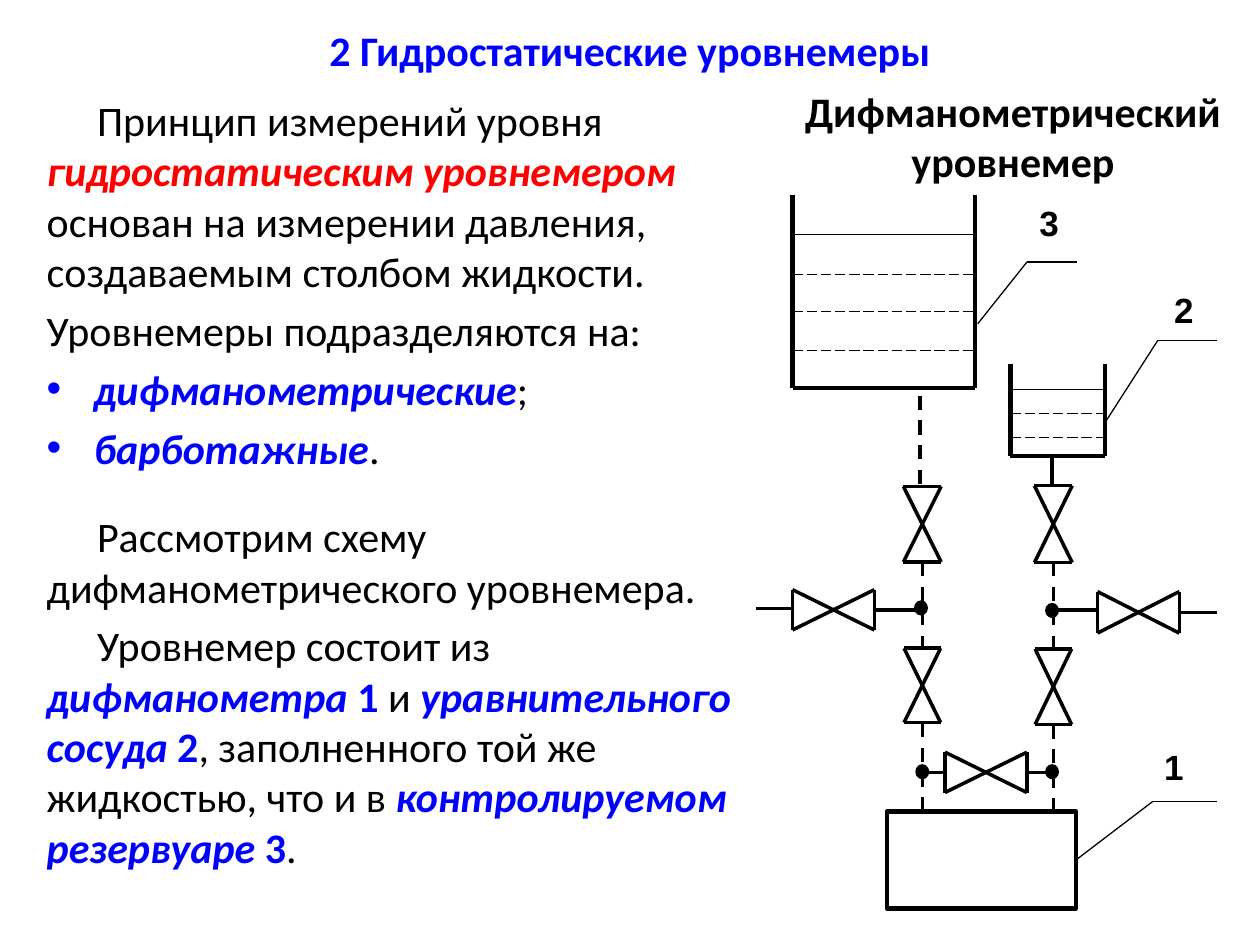
"""Build the slide on hydrostatic level gauges with a piping scheme."""
import pptx
import pptx.util
import pptx.dml.color
import pptx.enum.dml
import pptx.enum.shapes
import pptx.enum.text
from lxml import etree

HUES = {"black": "000000", "blue": "0000FF", "red": "FF0000", "white": "FFFFFF"}
STYLES = {
    "plain": ("black", False, False),
    "head": ("black", True, False),
    "title": ("blue", True, False),
    "term": ("blue", True, True),
    "key": ("red", True, True),
}
FACE = "Calibri"
COLS, ROWS = 100, 75

TITLE = "2 Гидростатические уровнемеры"
HEAD = ["Дифманометрический", "уровнемер"]
BODY = [
    ("indent", 0, [("Принцип измерений уровня ", "plain"),
                   ("гидростатическим уровнемером ", "key"),
                   ("основан на измерении давления, создаваемым столбом жидкости.", "plain")]),
    ("flush", 4.8, [("Уровнемеры подразделяются на:", "plain")]),
    ("bullet", 4.8, [("дифманометрические", "term"), (";", "plain")]),
    ("bullet", 4.8, [("барботажные", "term"), (".", "plain")]),
    ("indent", 21.8, [("Рассмотрим схему дифманометрического уровнемера.", "plain")]),
    ("indent", 4.8, [("Уровнемер состоит из ", "plain"),
                     ("дифманометра ", "term"), ("1 ", "title"), ("и ", "plain"),
                     ("уравнительного сосуда ", "term"), ("2", "title"),
                     (", заполненного той же жидкостью, что и в ", "plain"),
                     ("контролируемом резервуаре ", "term"), ("3", "title"),
                     (".", "plain")]),
]

METER = (70.4, 64.4, 15, 7.7)
TANKS = [
    (62.9, 15.5, 77.4, 30.8, [18.6, 21.8, 24.7, 27.8]),
    (80.2, 28.9, 87.7, 36.2, [30.9, 32.8, 34.7]),
]
LEFT, RIGHT = 73.2, 83.6
VALVES = [
    (LEFT, 41.6, 3, 6), (RIGHT, 41.6, 3, 6.1),
    (LEFT, 54.4, 2.9, 5.9), (RIGHT, 54.5, 2.9, 6),
    (66.15, 48.4, 6.5, 3.2), (90.35, 48.6, 6.5, 3.3), (78.25, 61.3, 6.5, 3.2),
]
PIPES = [
    (73, 38.4, 73, 30.9, "dash"), (83.5, 38.4, 83.5, 36.2, "solid"),
    (LEFT, 44.6, LEFT, 51.4, "dash"), (RIGHT, 44.6, RIGHT, 51.5, "dash"),
    (LEFT, 57.4, LEFT, 64.5, "dash"), (RIGHT, 57.5, RIGHT, 64.5, "dash"),
    (60, 48.3, 62.9, 48.3, "solid"), (69.4, 48.4, LEFT, 48.4, "solid"),
    (83.5, 48.4, 87.1, 48.4, "solid"), (93.6, 48.6, 96.6, 48.6, "solid"),
    (LEFT, 61.3, 75, 61.3, "solid"), (81.5, 61.3, 83.5, 61.3, "solid"),
]
DOTS = [(73.1, 48.25), (83.5, 48.45), (73.2, 61.25), (83.5, 61.25)]
CALLS = [
    ("1", (91.4, 58.7), (85.4, 68.25), (91.5, 63.6), 96.6),
    ("2", (92.2, 22.4), (87.6, 33.7), (91.9, 27), 96.6),
    ("3", (81.5, 15.5), (77.6, 25.7), (81.5, 20.8), 85.5),
]

DASH = pptx.enum.dml.MSO_LINE
KINDS = pptx.enum.shapes.MSO_SHAPE
ALIGN = pptx.enum.text.PP_ALIGN

deck = pptx.Presentation()
deck.slide_width = pptx.util.Inches(10)
deck.slide_height = pptx.util.Inches(7.5)
slide = deck.slides.add_slide(deck.slide_layouts[1])
shapes = slide.shapes


def px(col):
    return round(deck.slide_width * col / COLS)


def py(row):
    return round(deck.slide_height * row / ROWS)


def frame(x, y, w, h):
    return px(x), py(y), px(w), py(h)


def hue(name):
    return pptx.dml.color.RGBColor.from_string(HUES[name])


def put(shape, x, y, w, h):
    shape.left, shape.top, shape.width, shape.height = frame(x, y, w, h)


def write(para, text, style, face=FACE, size=24):
    run = para.add_run()
    run.text = text
    tint, bold, slant = STYLES[style]
    font = run.font
    font.name, font.size, font.bold, font.italic = face, pptx.util.Pt(size), bold, slant
    font.color.rgb = hue(tint)


def rule(x1, y1, x2, y2, weight=2, dash=None):
    line = shapes.add_connector(
        pptx.enum.shapes.MSO_CONNECTOR.STRAIGHT, px(x1), py(y1), px(x2), py(y2))
    line.line.color.rgb = hue("black")
    line.line.width = pptx.util.Pt(weight)
    if dash:
        line.line.dash_style = dash
    props = line._element.spPr
    etree.SubElement(props, props.nsmap["a"].join(["{", "}effectLst"]))
    return line


def solid(kind, place, fill, weight):
    shape = shapes.add_shape(kind, *frame(*place))
    shape.shadow.inherit = False
    shape.fill.solid()
    shape.fill.fore_color.rgb = hue(fill)
    shape.line.color.rgb = hue("black")
    shape.line.width = pptx.util.Pt(weight)
    return shape


def tank(x1, y1, x2, y2, rows):
    for ends in [(x1, y1, x1, y2), (x2, y1, x2, y2), (x1, y2, x2, y2)]:
        rule(*ends, 2.5)
    for nth, row in enumerate(rows):
        rule(x1, row, x2, row, 0.75, DASH.LONG_DASH if nth else None)


def valve(x, y, w, h):
    x1, x2, y1, y2 = x - w / 2, x + w / 2, y - h / 2, y + h / 2
    rule(x1, y1, x2, y2)
    rule(x1, y2, x2, y1)
    if h > w:
        rule(x1, y1, x2, y1)
        rule(x1, y2, x2, y2)
    else:
        rule(x1, y1, x1, y2)
        rule(x2, y1, x2, y2)


title = shapes.title
put(title, 5, 0.5, 90, 6.9)
title.text_frame.vertical_anchor = pptx.enum.text.MSO_ANCHOR.MIDDLE
title.text_frame.paragraphs[0].alignment = ALIGN.CENTER
write(title.text_frame.paragraphs[0], TITLE, "title")

body = slide.placeholders[1]
put(body, 2.7, 7, 58.3, 66.1)
text = body.text_frame
text.auto_size = pptx.enum.text.MSO_AUTO_SIZE.NONE
for nth, (form, gap, runs) in enumerate(BODY):
    para = text.add_paragraph() if nth else text.paragraphs[0]
    para.space_before = pptx.util.Pt(gap)
    if form != "bullet":
        props = para._p.get_or_add_pPr()
        props.set("marL", "0")
        props.set("indent", str(px(4) if form == "indent" else 0))
        etree.SubElement(props, props.nsmap["a"].join(["{", "}buNone"]))
    for words, style in runs:
        write(para, words, style)

meter = solid(KINDS.RECTANGLE, METER, "white", 2.5)
for spec in TANKS:
    tank(*spec)
for spot in VALVES:
    valve(*spot)
for *ends, dash in PIPES:
    rule(*ends, dash=DASH.DASH if dash == "dash" else None)
for x, y in DOTS:
    solid(KINDS.OVAL, (x - 0.5, y - 0.55, 1, 1.1), "black", 0.75)

for mark, spot, tip, bend, end in CALLS:
    lead = rule(*tip, *bend, 0.75)
    if mark == "1":
        lead.begin_connect(meter, 3)
    rule(*bend, end, bend[1], 0.75)
    label = shapes.add_textbox(*frame(*spot, 5.7, 4.5)).text_frame
    label.word_wrap = True
    write(label.paragraphs[0], mark, "head", "Arial", 20)

head = shapes.add_textbox(*frame(62.7, 6.3, 35.4, 9.1)).text_frame
head.word_wrap = False
for nth, words in enumerate(HEAD):
    para = head.add_paragraph() if nth else head.paragraphs[0]
    para.alignment = ALIGN.CENTER
    write(para, words, "head")

deck.save("out.pptx")
